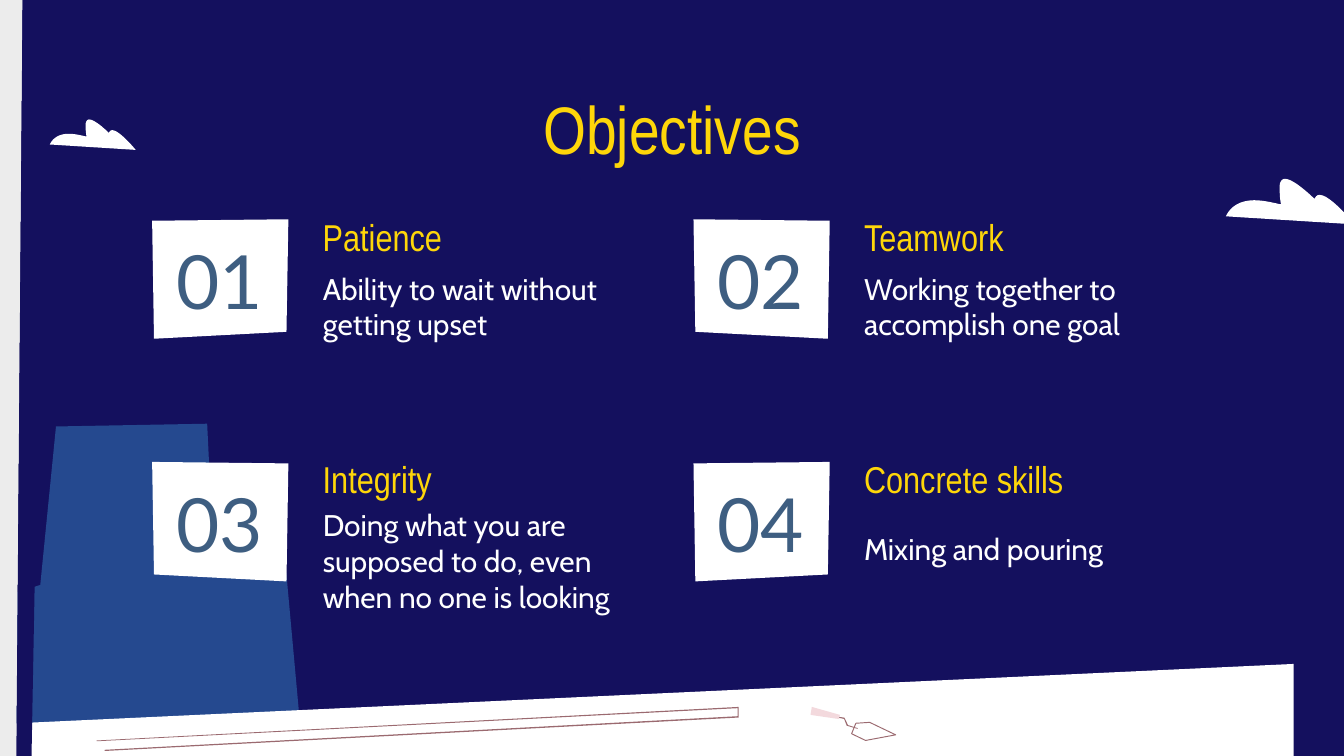
from pptx import Presentation
from pptx.dml.color import RGBColor as RGB
from pptx.enum.text import MSO_ANCHOR as Anchor, MSO_AUTO_SIZE as Fit, PP_ALIGN as Align
from pptx.util import Pt
from lxml.etree import SubElement
from pptx.oxml.ns import qn

NAVY = RGB(0x14, 0x10, 0x5E)
BLUE = RGB(0x25, 0x49, 0x8F)
STEEL = RGB(0x3E, 0x5E, 0x81)
GOLD = RGB(0xFE, 0xD6, 0x09)
WHITE = RGB(0xFF, 0xFF, 0xFF)
GREY = RGB(0xEC, 0xEC, 0xEC)
MAUVE = RGB(0x9B, 0x6A, 0x70)
PINK = RGB(0xF3, 0xD9, 0xDD)

ITEMS = [
    ("Patience", "Ability to wait without getting upset", 43),
    ("Teamwork", "Working together to accomplish one goal", 43),
    ("Integrity", "Doing what you are supposed to do, even when no one is looking", 55.4),
    ("Concrete skills", "Mixing and pouring", 43),
]


def write(shape, text, size=16, font="Cabin", color=WHITE, align=Align.LEFT, anchor=Anchor.MIDDLE):
    frame = shape.text_frame
    frame.word_wrap = True
    frame.auto_size = Fit.NONE
    frame.vertical_anchor = anchor
    frame.margin_left = frame.margin_right = frame.margin_top = frame.margin_bottom = 0
    para = frame.paragraphs[0]
    props = para._p.get_or_add_pPr()
    props.set("marL", "0")
    props.set("indent", "0")
    SubElement(props, qn("a:buNone"))
    para.alignment = align
    para.line_spacing = 1.0
    para.space_before = Pt(0)
    run = para.add_run()
    run.text = text
    run.font.name = font
    run.font.size = Pt(size)
    run.font.bold = False
    run.font.color.rgb = color


def place(shape, left, top, width, height):
    shape.left, shape.top = Pt(left), Pt(top)
    shape.width, shape.height = Pt(width), Pt(height)
    return shape


def label(slide, box, text, **style):
    shape = slide.shapes.add_textbox(*[Pt(n) for n in box])
    write(shape, text, **style)


def draw(slide, left, top, dots, fill=None, line=None):
    spots = [(Pt(left + x), Pt(top + y)) for x, y in dots]
    pen = slide.shapes.build_freeform(*spots[0], scale=1.0)
    pen.add_line_segments(spots[1:], close=True)
    shape = pen.convert_to_shape()
    shape.shadow.inherit = False
    if fill is None:
        shape.fill.background()
    else:
        shape.fill.solid()
        shape.fill.fore_color.rgb = fill
    if line is None:
        shape.line.fill.background()
    else:
        shape.line.color.rgb = line
        shape.line.width = Pt(0.5)


def curve(a, b, c, d, steps=12):
    dots = []
    for i in range(1, steps + 1):
        t = i / steps
        s = 1 - t
        dots.append(tuple(
            s**3 * p + 3 * s * s * t * q + 3 * s * t * t * r + t**3 * e
            for p, q, r, e in zip(a, b, c, d)))
    return dots


def cloud(slide, left, top, width):
    dots = [(44, 0)]
    for arc in [
        [(42, 0), (40, 2), (40, 6)],
        [(40, 15), (41, 18), (41, 19)],
        [(39, 19), (30, 16), (21, 16)],
        [(13, 16), (4, 19), (0, 28)],
        [(32, 30), (64, 32), (96, 34)],
        [(96, 34), (78, 12), (70, 12)],
        [(68, 12), (67, 13), (66, 15)],
        [(66, 15), (51, 0), (44, 0)],
    ]:
        dots += curve(dots[-1], *arc)
    unit = width / 96
    draw(slide, left, top, [(x * unit, y * unit) for x, y in dots], WHITE)


def tower(slide, left, top):
    draw(slide, left, top, [(171, 164), (163.4, 80), (124.5, 73), (121, 0), (40, 1.5),
                            (31.6, 86.4), (0, 96.4), (7, 170)], BLUE)


def ground(slide, left, top):
    draw(slide, left, top, [(699, 0), (699, 70), (0, 70), (0, 32.5)], WHITE)


def plank(slide, left, top):
    draw(slide, left, top, [(344, 0), (0, 18), (0, 18.4), (343.4, 0.7), (343.4, 5),
                            (4.3, 23), (4.3, 23.6), (344, 5.7)], MAUVE)


def trowel(slide, left, top):
    draw(slide, left, top, [(12.2, 5), (12.2, 5.3), (18, 6.5), (19.4, 10.1), (25.2, 11.8),
                            (25.2, 11.4), (20.1, 9.8), (18.2, 5.8)], MAUVE)
    draw(slide, left, top, [(31.7, 8.3), (45.6, 15), (29.5, 18), (22, 14.4), (24.3, 8.8)], line=MAUVE)
    draw(slide, left, top, [(0.7, 0), (0, 4.3), (15.1, 6.5), (15.8, 4.3)], PINK)


def edge(slide, left, top):
    draw(slide, left, top, [(0, 0), (4.3, 443.5), (33.8, 435.6), (37.4, 0)], GREY)
    draw(slide, left, top, [(37.4, 0), (33.8, 435.6), (41.8, 432.7), (49.7, 0)], NAVY)


def card(slide, body, left, top, num, item, flip):
    head, text, high = item
    wide = 73
    dots = [(0, 0.8), (wide, 0), (wide - 1, 60.3), (1, 64)]
    if flip:
        dots = [(wide - x, y) for x, y in dots]
    draw(slide, left, top, dots, WHITE)
    label(slide, (left + 2, top + 13.7, 68.4, 37.4), f"{num:02}",
          size=40, font="Lato", color=STEEL, align=Align.CENTER)
    label(slide, (left + 91.4, top - 4.3, 175.7, 26.6), head,
          size=20, font="Arial Narrow", color=GOLD)
    write(place(body, left + 91.4, top + 25, 175.7, high), text)


def scene(slide):
    tower(slide, -10, 227)
    ground(slide, -6, 355.7)
    plank(slide, 51.8, 378.7)
    trowel(slide, 434.2, 378.7)
    edge(slide, -25.2, -11)
    cloud(slide, 26.7, 64, 46)
    cloud(slide, 656.8, 95.8, 69)


def goals(slide, left, top):
    bodies = list(slide.placeholders)[1:]
    for i, (body, item) in enumerate(zip(bodies, ITEMS)):
        row, col = divmod(i, 2)
        card(slide, body, left + col * 290, top + row * 130, i + 1, item, (row + col) % 2)


def main():
    deck = Presentation()
    deck.slide_width, deck.slide_height = Pt(720), Pt(405)
    slide = deck.slides.add_slide(deck.slide_layouts.get_by_name("Comparison"))
    slide.background.fill.solid()
    slide.background.fill.fore_color.rgb = NAVY
    write(place(slide.shapes.title, 59, 46.8, 602, 34), "Objectives", size=36,
          font="Arial Narrow", color=GOLD, align=Align.CENTER, anchor=Anchor.TOP)
    scene(slide)
    goals(slide, 81.5, 117.5)
    deck.save("out.pptx")


if __name__ == "__main__":
    main()
